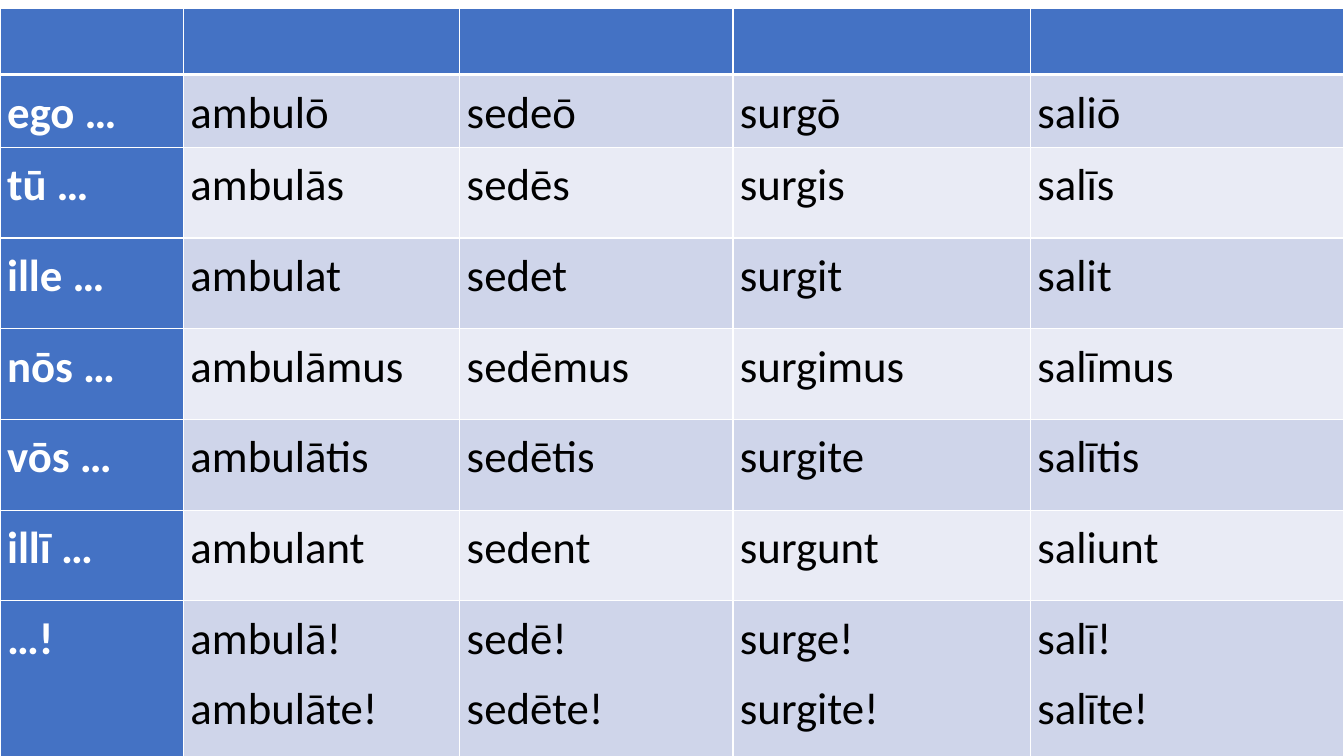
import pptx
import pptx.dml.color
import pptx.oxml
import pptx.oxml.ns
import pptx.util

Inches = pptx.util.Inches
Pt = pptx.util.Pt

FORMS = [
    ["", "", "", "", ""],
    ["ego …", "ambulō", "sedeō", "surgō", "saliō"],
    ["tū …", "ambulās", "sedēs", "surgis", "salīs"],
    ["ille …", "ambulat", "sedet", "surgit", "salit"],
    ["nōs …", "ambulāmus", "sedēmus", "surgimus", "salīmus"],
    ["vōs …", "ambulātis", "sedētis", "surgite", "salītis"],
    ["illī …", "ambulant", "sedent", "surgunt", "saliunt"],
    ["…!", "ambulā!\nambulāte!", "sedē!\nsedēte!", "surge!\nsurgite!", "salī!\nsalīte!"],
]
VERB_WIDTHS = [1.82, 2.74, 2.71, 2.95, 3.11]
PERSON_HEIGHTS = [0.66, 0.71] + [0.9] * 5 + [1.77]


def color(value):
    return pptx.dml.color.RGBColor.from_string(value)


class ConjugationSlide:
    """Holds the table style and the slide being built."""

    font, size = "Calibri", 32
    header, bands = "4472C4", ("E9EBF5", "CFD5EA")
    light, dark = "FFFFFF", "000000"

    def __init__(self, deck):
        self.slide = deck.slides.add_slide(deck.slide_layouts[6])

    def border(self, cell, side, width):
        line = pptx.oxml.parse_xml(
            f'<a:{side} {pptx.oxml.ns.nsdecls("a")} w="{Pt(width)}"><a:solidFill>'
            f'<a:srgbClr val="{self.light}"/></a:solidFill></a:{side}>')
        cell._tc.get_or_add_tcPr().append(line)

    def cell_text(self, cell, text, is_person):
        cell.margin_left = cell.margin_right = Inches(0.07)
        cell.margin_top = cell.margin_bottom = Inches(0.07)
        for index, form in enumerate(text.split("\n")):
            frame = cell.text_frame
            paragraph = frame.add_paragraph() if index else frame.paragraphs[0]
            paragraph.line_spacing = 1.07
            paragraph.space_after = Pt(8)
            run = paragraph.add_run()
            run.text = form
            run.font.name = self.font
            run.font.size = Pt(self.size)
            run.font.bold = is_person
            run.font.color.rgb = color(self.light if is_person else self.dark)

    def table(self, left, top, forms, widths, heights):
        conjugation = self.slide.shapes.add_table(
            len(forms), len(widths), Inches(left), Inches(top),
            Inches(sum(widths)), Inches(sum(heights))).table
        for column, width in zip(conjugation.columns, widths):
            column.width = Inches(width)
        for row, height in zip(conjugation.rows, heights):
            row.height = Inches(height)
        conjugation.first_col = True
        for r, person in enumerate(forms):
            for c, form in enumerate(person):
                cell = conjugation.cell(r, c)
                if form:
                    self.cell_text(cell, form, c == 0)
                self.border(cell, "lnL", 1)
                self.border(cell, "lnR", 1)
                self.border(cell, "lnT", 3 if r == 1 else 1)
                self.border(cell, "lnB", 3 if r == 0 else 1)
                cell.fill.solid()
                is_header = r == 0 or c == 0
                cell.fill.fore_color.rgb = color(self.header if is_header else self.bands[r % 2])


def main():
    deck = pptx.Presentation()
    deck.slide_width, deck.slide_height = Inches(13.33), Inches(7.5)
    ConjugationSlide(deck).table(0, 0.08, FORMS, VERB_WIDTHS, PERSON_HEIGHTS)
    deck.save("out.pptx")


if __name__ == "__main__":
    main()
